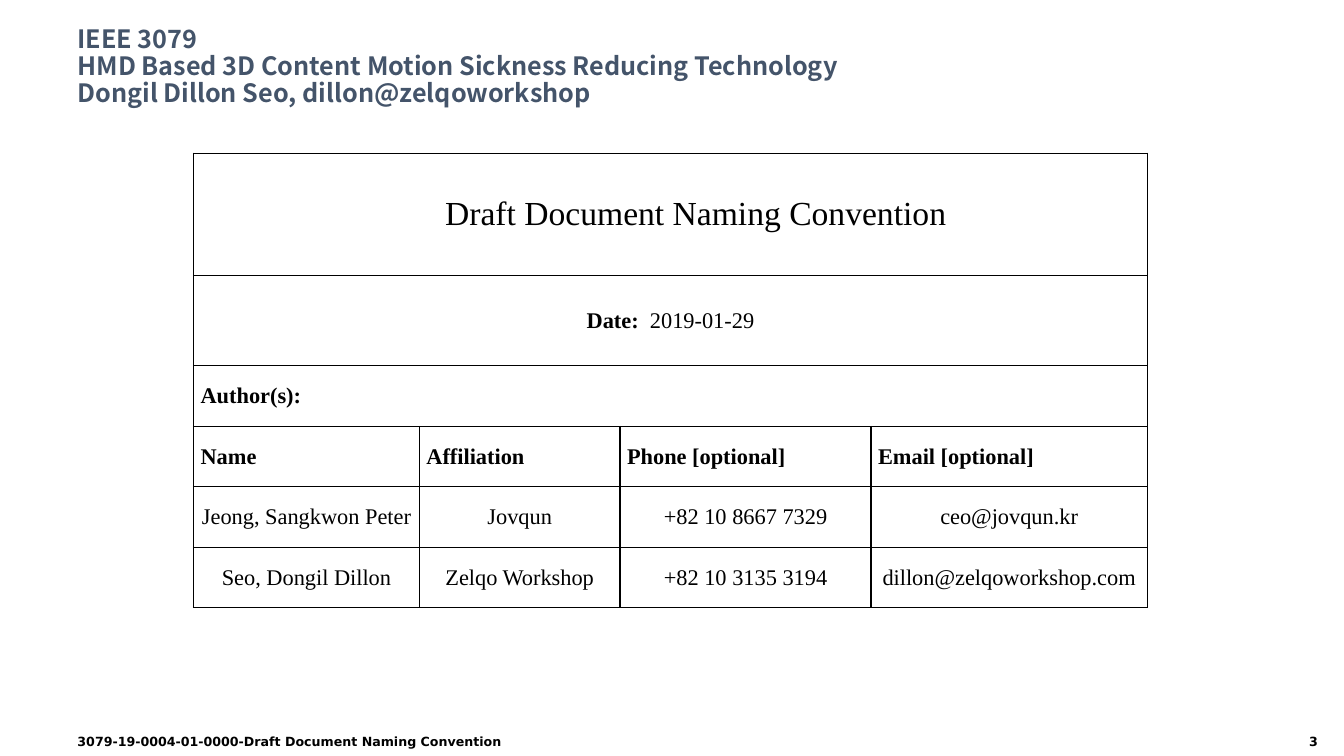
"""Build the draft document naming convention slide with its author table."""
import lxml.etree
import pptx
import pptx.dml.color
import pptx.enum.text
import pptx.oxml.ns
import pptx.util

Inches = pptx.util.Inches
Align = pptx.enum.text.PP_ALIGN
Anchor = pptx.enum.text.MSO_ANCHOR
qn = pptx.oxml.ns.qn


def set_font(font, name, size, color, bold):
    font.name = name
    font.size = pptx.util.Pt(size)
    font.bold = bold
    font.color.rgb = pptx.dml.color.RGBColor.from_string(color)


def add_text(slide, place, text, size, name, color, align=Align.LEFT, anchor=Anchor.TOP):
    box = slide.shapes.add_textbox(*[Inches(length) for length in place])
    box.text_frame.word_wrap = True
    box.text_frame.vertical_anchor = anchor
    para = box.text_frame.paragraphs[0]
    para.text = text
    para.alignment = align
    set_font(para.font, name, size, color, True)
    return para


deck = pptx.Presentation()
deck.slide_width = Inches(13.33)
deck.slide_height = Inches(7.5)
slide = deck.slides.add_slide(deck.slide_layouts[6])

column_widths = [2.24, 1.99, 2.49, 2.74]
row_heights = [1.21, 0.9, 0.6, 0.6, 0.6, 0.6]
rows = [
    ["Draft Document Naming Convention"],
    ["Date:"],
    ["Author(s):"],
    ["Name", "Affiliation", "Phone [optional]", "Email [optional]"],
    ["Jeong, Sangkwon Peter", "Jovqun", "+82 10 8667 7329", "ceo@jovqun.kr"],
    ["Seo, Dongil Dillon", "Zelqo Workshop", "+82 10 3135 3194", "dillon@zelqoworkshop.com"],
]
left_rows = (2, 3)
bold_rows = (1, 2, 3)

table = slide.shapes.add_table(
    len(rows), len(column_widths), Inches(1.92), Inches(1.52), Inches(9.45), Inches(4.5)
).table
table.first_row = False
table.horz_banding = False
for column, width in zip(table.columns, column_widths):
    column.width = Inches(width)

for row_index, (texts, height) in enumerate(zip(rows, row_heights)):
    table.rows[row_index].height = Inches(height)
    if len(texts) == 1:
        table.cell(row_index, 0).merge(table.cell(row_index, len(column_widths) - 1))
    for column_index in range(len(column_widths)):
        cell = table.cell(row_index, column_index)
        cell.margin_left = cell.margin_right = Inches(0.07)
        cell.margin_top = cell.margin_bottom = 0
        cell.vertical_anchor = Anchor.MIDDLE
        properties = cell._tc.get_or_add_tcPr()
        for side in ("a:lnL", "a:lnR", "a:lnT", "a:lnB"):
            line = lxml.etree.SubElement(properties, qn(side), w=str(pptx.util.Pt(1)))
            paint = lxml.etree.SubElement(line, qn("a:solidFill"))
            lxml.etree.SubElement(paint, qn("a:srgbClr"), val="000000")
        cell.fill.background()
        if column_index < len(texts):
            para = cell.text_frame.paragraphs[0]
            para.text = texts[column_index]
            para.alignment = Align.LEFT if row_index in left_rows else Align.CENTER
            size = 24 if row_index == 0 else 16
            set_font(para.font, "Times New Roman", size, "000000", row_index in bold_rows)

heading = table.cell(0, 0).text_frame.paragraphs[0]
heading._p.get_or_add_pPr().set("marL", str(Inches(0.5)))
date = table.cell(1, 0).text_frame.paragraphs[0]
span = date.add_run()
span.text = "  2019-01-29"
span.font.bold = False
for para in (heading, date):
    para.space_after = pptx.util.Pt(12)

title = add_text(
    slide,
    (0.67, 0.17, 10.5, 1),
    "IEEE 3079\v"
    "HMD Based 3D Content Motion Sickness Reducing Technology\v"
    "Dongil Dillon Seo, dillon@zelqoworkshop",
    18, "Noto Sans CJK KR", "44546A", anchor=Anchor.MIDDLE,
)
title.line_spacing = 0.9
add_text(
    slide, (0.67, 7.23, 5.89, 0.27),
    "3079-19-0004-01-0000-Draft Document Naming Convention", 9, "DejaVu Sans", "000000",
)
add_text(slide, (11, 7.23, 2.17, 0.27), "3", 9, "DejaVu Sans", "000000", Align.RIGHT)

deck.save("out.pptx")
